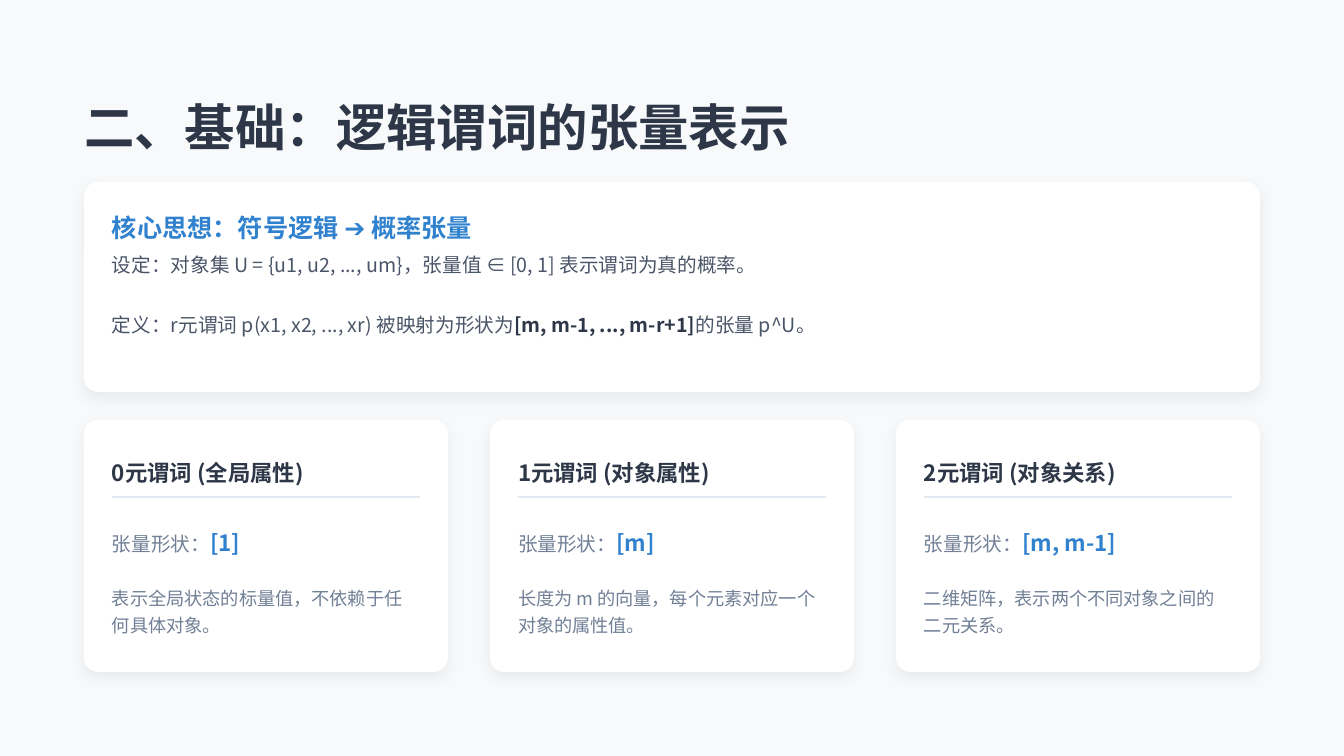
from lxml import etree
from pptx import Presentation
from pptx.dml.color import RGBColor
from pptx.enum.shapes import MSO_CONNECTOR, MSO_SHAPE
from pptx.enum.text import MSO_ANCHOR, MSO_AUTO_SIZE, PP_ALIGN
from pptx.oxml.ns import qn
from pptx.util import Pt

ROUND = MSO_SHAPE.ROUNDED_RECTANGLE
LINE = MSO_CONNECTOR.STRAIGHT
MIDDLE = MSO_ANCHOR.MIDDLE
FIXED = MSO_AUTO_SIZE.NONE
LEFT = PP_ALIGN.LEFT

FONT = "Noto Sans CJK SC"
DARK, BODY, MUTED, BLUE = "2D3748", "4A5568", "718096", "3182CE"
WHITE, RULE, BACK = "FFFFFF", "E2E8F0", "F8F9FA"
SIDE, WIDE, GAP, PAD, ROUNDING = 60, 840, 30, 20, 10

CARDS = [
    ("0元谓词 (全局属性)", "[1]", "表示全局状态的标量值，不依赖于任何具体对象。"),
    ("1元谓词 (对象属性)", "[m]", "长度为 m 的向量，每个元素对应一个对象的属性值。"),
    ("2元谓词 (对象关系)", "[m, m-1]", "二维矩阵，表示两个不同对象之间的二元关系。"),
]


def color(value):
    return RGBColor.from_string(value)


def add_run(para, text, size=14, fill=BODY, bold=False):
    run = para.add_run()
    run.text = text
    font = run.font
    font.size, font.bold, font.name = Pt(size), bold, FONT
    font.color.rgb = color(fill)
    asian = etree.SubElement(font._element, qn("a:ea"))
    asian.set("typeface", FONT)


def set_text(shape, *runs, **style):
    frame = shape.text_frame
    frame.word_wrap = True
    frame.auto_size = FIXED
    frame.vertical_anchor = MIDDLE
    frame.margin_left = frame.margin_right = 0
    frame.margin_top = frame.margin_bottom = 0
    para = frame.paragraphs[0]
    para.alignment = LEFT
    para.line_spacing = 1.25
    for text, extra in runs:
        add_run(para, text, **{**style, **extra})


def add_text(slide, box, *runs, **style):
    shape = slide.shapes.add_textbox(*map(Pt, box))
    set_text(shape, *runs, **style)


def add_shadow(shape):
    effects = shape._element.spPr.find(qn("a:effectLst"))
    outer = etree.SubElement(effects, qn("a:outerShdw"))
    outer.set("blurRad", str(Pt(10)))
    outer.set("dist", str(Pt(4)))
    outer.set("dir", "5400000")
    outer.set("algn", "ctr")
    outer.set("rotWithShape", "0")
    black = etree.SubElement(outer, qn("a:srgbClr"), val="000000")
    etree.SubElement(black, qn("a:alpha"), val="5000")


def add_panel(slide, box):
    panel = slide.shapes.add_shape(ROUND, *map(Pt, box))
    panel.adjustments[0] = ROUNDING / min(box[2:])
    panel.fill.solid()
    panel.fill.fore_color.rgb = color(WHITE)
    panel.line.fill.background()
    panel.shadow.inherit = False
    add_shadow(panel)


def add_rule(slide, left, top, width):
    rule = slide.shapes.add_connector(
        LINE, Pt(left), Pt(top), Pt(left + width), Pt(top))
    rule.line.color.rgb = color(RULE)
    rule.line.width = Pt(1)
    etree.SubElement(rule._element.spPr, qn("a:effectLst"))


def add_title(slide, box, text):
    title = slide.shapes.title
    title.left, title.top, title.width, title.height = map(Pt, box)
    set_text(title, (text, {}), size=36, fill=DARK, bold=True)


def add_idea(slide, box):
    left, top, width, height = box
    inner, span = left + PAD, width - 2 * PAD
    add_panel(slide, box)
    add_text(slide, (inner, top + 15, span, 30),
             ("核心思想：符号逻辑 ➔ 概率张量", {}),
             size=18, fill=BLUE, bold=True)
    add_text(slide, (inner, top + 45, span, 24),
             ("设定：对象集 U = {u1, u2, ..., um}，"
              "张量值 ∈ [0, 1] 表示谓词为真的概率。", {}))
    add_text(slide, (inner, top + 75, span, 50),
             ("定义：r元谓词 p(x1, x2, ..., xr) 被映射为形状为", {}),
             ("[m, m-1, ..., m-r+1]", {"fill": DARK, "bold": True}),
             ("的张量 p^U。", {}))


def add_card(slide, box, head, form, note):
    left, top, width, height = box
    inner, span = left + PAD, width - 2 * PAD
    add_panel(slide, box)
    add_text(slide, (inner, top + 20, span, 30), (head, {}),
             size=16, fill=DARK, bold=True)
    add_rule(slide, inner, top + 55, span)
    add_text(slide, (inner, top + 70, span, 30),
             ("张量形状：", {}),
             (form, {"size": 16, "fill": BLUE, "bold": True}),
             fill=MUTED)
    add_text(slide, (inner, top + 105, span, 60), (note, {}),
             size=13, fill=MUTED)


def add_cards(slide, box, cards):
    left, top, width, height = box
    each = (width - GAP * (len(cards) - 1)) / len(cards)
    for index, card in enumerate(cards):
        place = left + index * (each + GAP)
        add_card(slide, (place, top, each, height), *card)


def main():
    deck = Presentation()
    deck.slide_width, deck.slide_height = Pt(960), Pt(540)
    slide = deck.slides.add_slide(deck.slide_layouts[5])
    slide.background.fill.solid()
    slide.background.fill.fore_color.rgb = color(BACK)
    add_title(slide, (SIDE, 60, WIDE, 50), "二、基础：逻辑谓词的张量表示")
    add_idea(slide, (SIDE, 130, WIDE, 150))
    add_cards(slide, (SIDE, 300, WIDE, 180), CARDS)
    deck.save("out.pptx")


if __name__ == "__main__":
    main()
